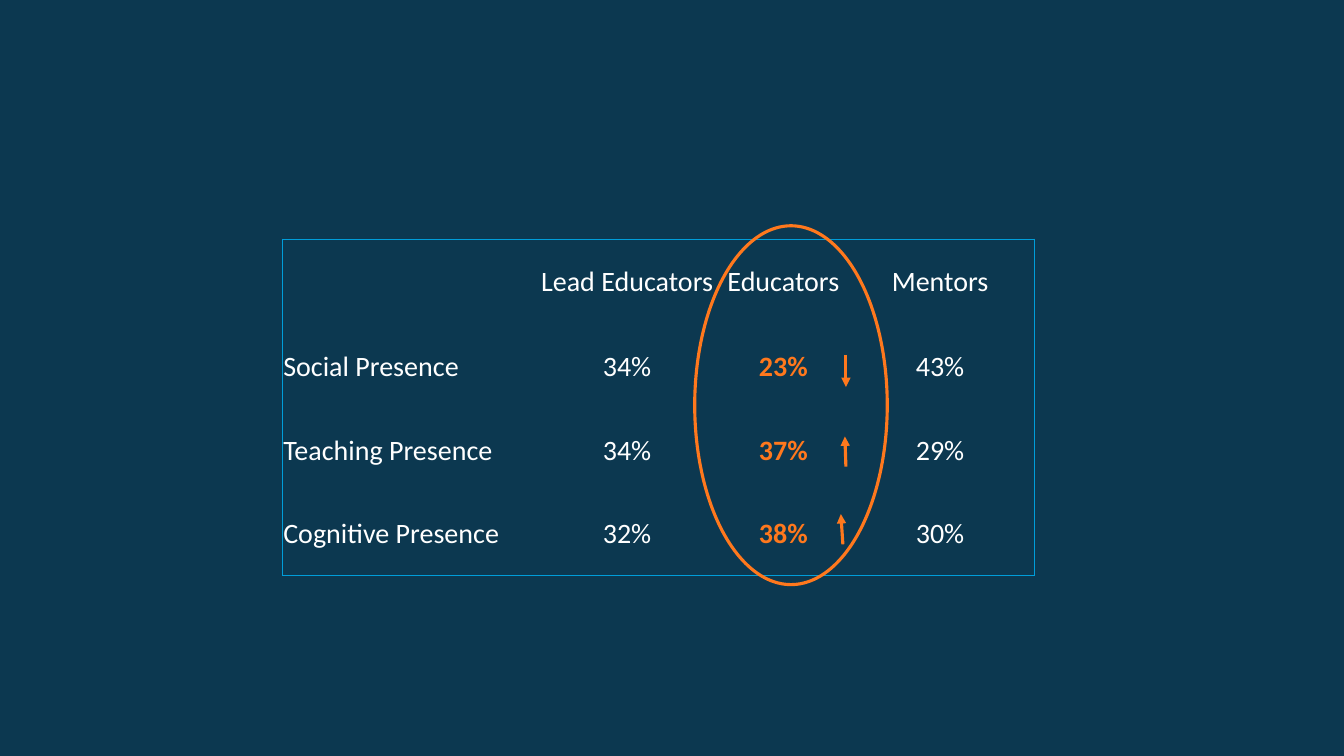
"""Build a slide with a table of presence by role, one column circled."""
from lxml.etree import SubElement
from pptx import Presentation
from pptx.dml.color import RGBColor
from pptx.enum.shapes import MSO_CONNECTOR, MSO_SHAPE
from pptx.enum.text import MSO_ANCHOR, PP_ALIGN
from pptx.oxml.ns import qn
from pptx.util import Inches, Pt

NAVY, WHITE, ORANGE, BLUE = "0C3850", "FFFFFF", "FF781D", "009DD9"
ROWS = [
    ("", "Lead Educators", "Educators", "Mentors"),
    ("Social Presence", "34%", "23%", "43%"),
    ("Teaching Presence", "34%", "37%", "29%"),
    ("Cognitive Presence", "32%", "38%", "30%"),
]
WIDTHS = (2.49, 1.86, 1.24, 1.87)
HEIGHTS = (0.85, 0.83, 0.83, 0.83)
ARROWS = [
    (8.39, 4.63, 8.38, 4.33),
    (8.36, 5.4, 8.34, 5.1),
    (8.39, 3.52, 8.39, 3.84),
]
KEY = 2


def color(code):
    return RGBColor.from_string(code)


def stroke(line):
    line.color.rgb = color(ORANGE)
    line.width = Pt(2.25)


def border(cell, sides):
    props = cell._tc.get_or_add_tcPr()
    for side, shown in sides.items():
        edge = SubElement(props, qn(f"a:ln{side}"), w=str(Pt(0.5)))
        if shown:
            fill = SubElement(edge, qn("a:solidFill"))
            SubElement(fill, qn("a:srgbClr"), val=BLUE)
        else:
            SubElement(edge, qn("a:noFill"))


def style(cell, text, row, col):
    border(cell, {"L": col == 0, "R": col == len(WIDTHS) - 1,
                  "T": row == 0, "B": row == len(ROWS) - 1})
    cell.fill.background()
    cell.vertical_anchor = MSO_ANCHOR.MIDDLE
    cell.margin_left = cell.margin_right = cell.margin_top = Inches(0.01)
    cell.margin_bottom = 0
    cell.text = text
    para = cell.text_frame.paragraphs[0]
    para.alignment = PP_ALIGN.CENTER if col else PP_ALIGN.LEFT
    marked = row > 0 and col == KEY
    font = para.font
    font.name, font.size, font.bold = "Calibri", Pt(20), marked
    font.color.rgb = color(ORANGE if marked else WHITE)


def add_grid(slide):
    table = slide.shapes.add_table(
        len(ROWS), len(WIDTHS), Inches(2.8), Inches(2.37),
        Inches(sum(WIDTHS)), Inches(sum(HEIGHTS))).table
    table.first_row = table.horz_banding = False
    for col, width in enumerate(WIDTHS):
        table.columns[col].width = Inches(width)
    for row, (texts, height) in enumerate(zip(ROWS, HEIGHTS)):
        table.rows[row].height = Inches(height)
        for col, text in enumerate(texts):
            style(table.cell(row, col), text, row, col)


def add_arrow(slide, ends):
    arrow = slide.shapes.add_connector(
        MSO_CONNECTOR.STRAIGHT, *map(Inches, ends))
    stroke(arrow.line)
    SubElement(arrow.line._get_or_add_ln(), qn("a:tailEnd"), type="triangle")
    SubElement(arrow._element.spPr, qn("a:effectLst"))


def main():
    deck = Presentation()
    deck.slide_width, deck.slide_height = Inches(13.33), Inches(7.5)
    slide = deck.slides.add_slide(deck.slide_layouts[6])
    slide.background.fill.solid()
    slide.background.fill.fore_color.rgb = color(NAVY)
    add_grid(slide)
    for ends in ARROWS:
        add_arrow(slide, ends)
    ring = slide.shapes.add_shape(
        MSO_SHAPE.OVAL, *map(Inches, (6.89, 2.24, 1.91, 3.56)))
    ring.shadow.inherit = False
    ring.fill.background()
    stroke(ring.line)
    deck.save("out.pptx")


if __name__ == "__main__":
    main()
